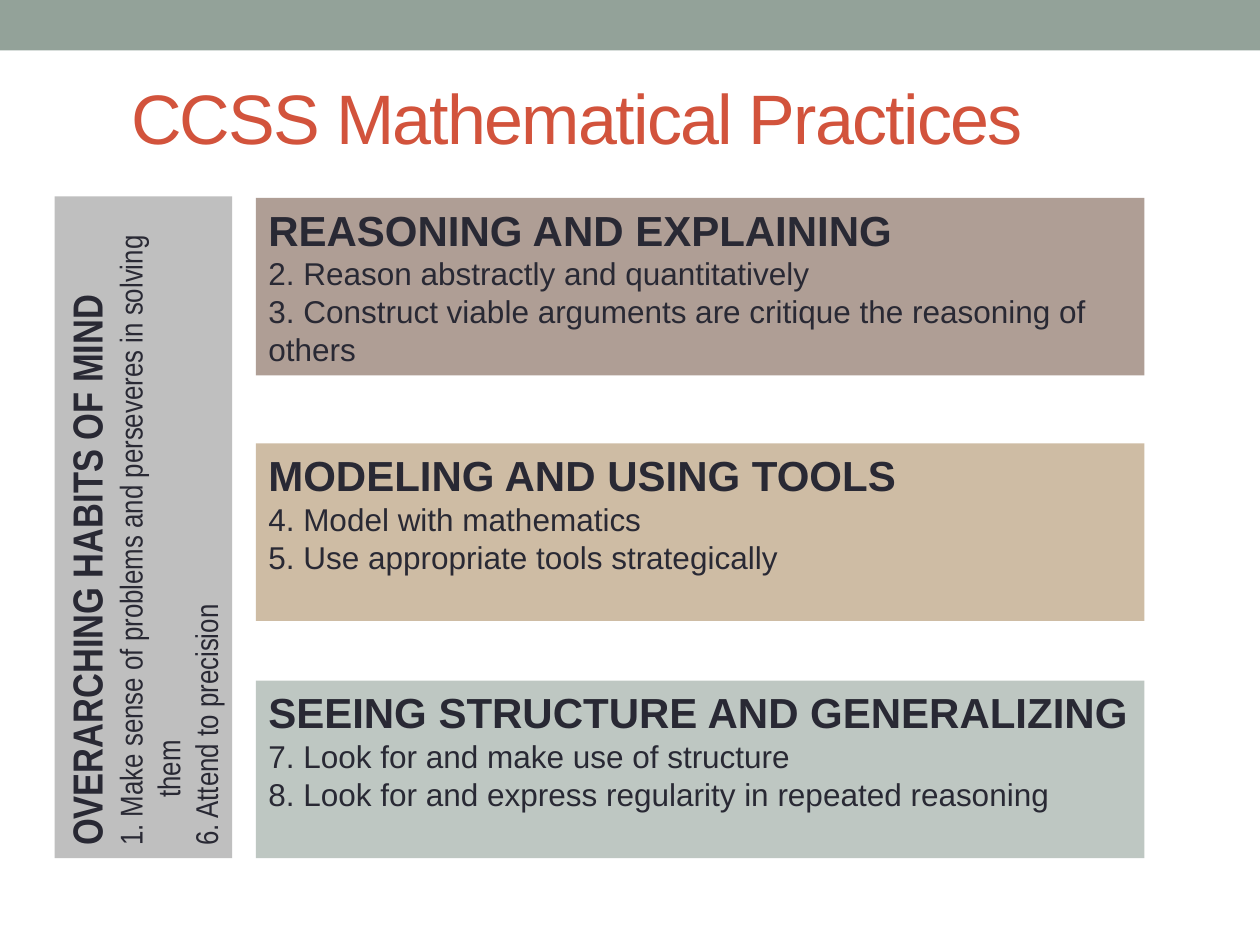
from pptx import Presentation
from pptx.dml.color import RGBColor as RGB
from pptx.enum.shapes import MSO_SHAPE as Shape
from pptx.enum.text import MSO_ANCHOR as Anchor, MSO_AUTO_SIZE as Fit, PP_ALIGN as Align
from pptx.util import Cm, Pt

COLORS = {
    "band": "93A299", "title": "D2533C", "text": "292934", "habits": "BFBFBF",
    "reasoning": "AF9E95", "modeling": "CEBCA4", "structure": "BEC7C2",
}
TITLE = "CCSS Mathematical Practices"
HABITS = ("OVERARCHING HABITS OF MIND", [
    "1. Make sense of problems and perseveres in solving them",
    "6. Attend to precision",
])
# colour, top in cm, heading, practices
GROUPS = [
    ("reasoning", 3.99, "REASONING AND EXPLAINING", [
        "2. Reason abstractly and quantitatively",
        "3. Construct viable arguments are critique the reasoning of others",
    ]),
    ("modeling", 8.94, "MODELING AND USING TOOLS", [
        "4. Model with mathematics",
        "5. Use appropriate tools strategically",
    ]),
    ("structure", 13.72, "SEEING STRUCTURE AND GENERALIZING", [
        "7. Look for and make use of structure",
        "8. Look for and express regularity in repeated reasoning",
    ]),
]
HEADING = {"size": Pt(24), "bold": True}
PRACTICE = {"size": Pt(18), "bold": False}
FRAME = {"word_wrap": True, "auto_size": Fit.NONE, "vertical_anchor": Anchor.TOP}


def set_attrs(obj, values):
    for name, value in values.items():
        setattr(obj, name, value)


def add_run(p, text, color, **font):
    r = p.add_run()
    r.text = text
    r.font.color.rgb = RGB.from_string(COLORS[color])
    set_attrs(r.font, font)
    return r


def add_box(slide, color, left, top, width, height):
    sp = slide.shapes.add_shape(Shape.RECTANGLE, Cm(left), Cm(top), Cm(width), Cm(height))
    sp.fill.solid()
    sp.fill.fore_color.rgb = RGB.from_string(COLORS[color])
    sp.line.fill.background()
    sp.shadow.inherit = False
    return sp


def write_practices(sp, heading, practices, font, hanging=0):
    tf = sp.text_frame
    set_attrs(tf, FRAME)
    lines = [(heading, HEADING)] + [(text, PRACTICE) for text in practices]
    for i, (text, style) in enumerate(lines):
        p = tf.add_paragraph() if i else tf.paragraphs[0]
        p.alignment = Align.LEFT
        if hanging:
            pPr = p._p.get_or_add_pPr()
            pPr.set("marL", str(Cm(hanging)))
            pPr.set("indent", str(-Cm(hanging)))
        add_run(p, text, "text", name=font, **style)


def add_title(slide):
    sp = slide.shapes.title
    set_attrs(sp, {"left": Cm(2.39), "top": Cm(0.76), "width": Cm(20.83), "height": Cm(3.18)})
    tf = sp.text_frame
    set_attrs(tf, {**FRAME, "vertical_anchor": Anchor.MIDDLE})
    p = tf.paragraphs[0]
    p.alignment = Align.LEFT
    r = add_run(p, TITLE, "title", name="Arial", size=Pt(40))
    r.font._element.set("spc", "-100")


def main():
    prs = Presentation()
    prs.slide_width, prs.slide_height = Cm(25.4), Cm(19.05)
    slide = prs.slides.add_slide(prs.slide_layouts[5])

    add_box(slide, "band", 0, 0, 25.4, 1.02)
    add_title(slide)

    habits = add_box(slide, "habits", -3.78, 8.84, 13.34, 3.58)
    habits.rotation = 270
    write_practices(habits, *HABITS, font="Arial Narrow", hanging=0.97)

    for color, top, heading, practices in GROUPS:
        sp = add_box(slide, color, 5.16, top, 17.91, 3.58)
        write_practices(sp, heading, practices, font="Arial")

    prs.save("out.pptx")


if __name__ == "__main__":
    main()
